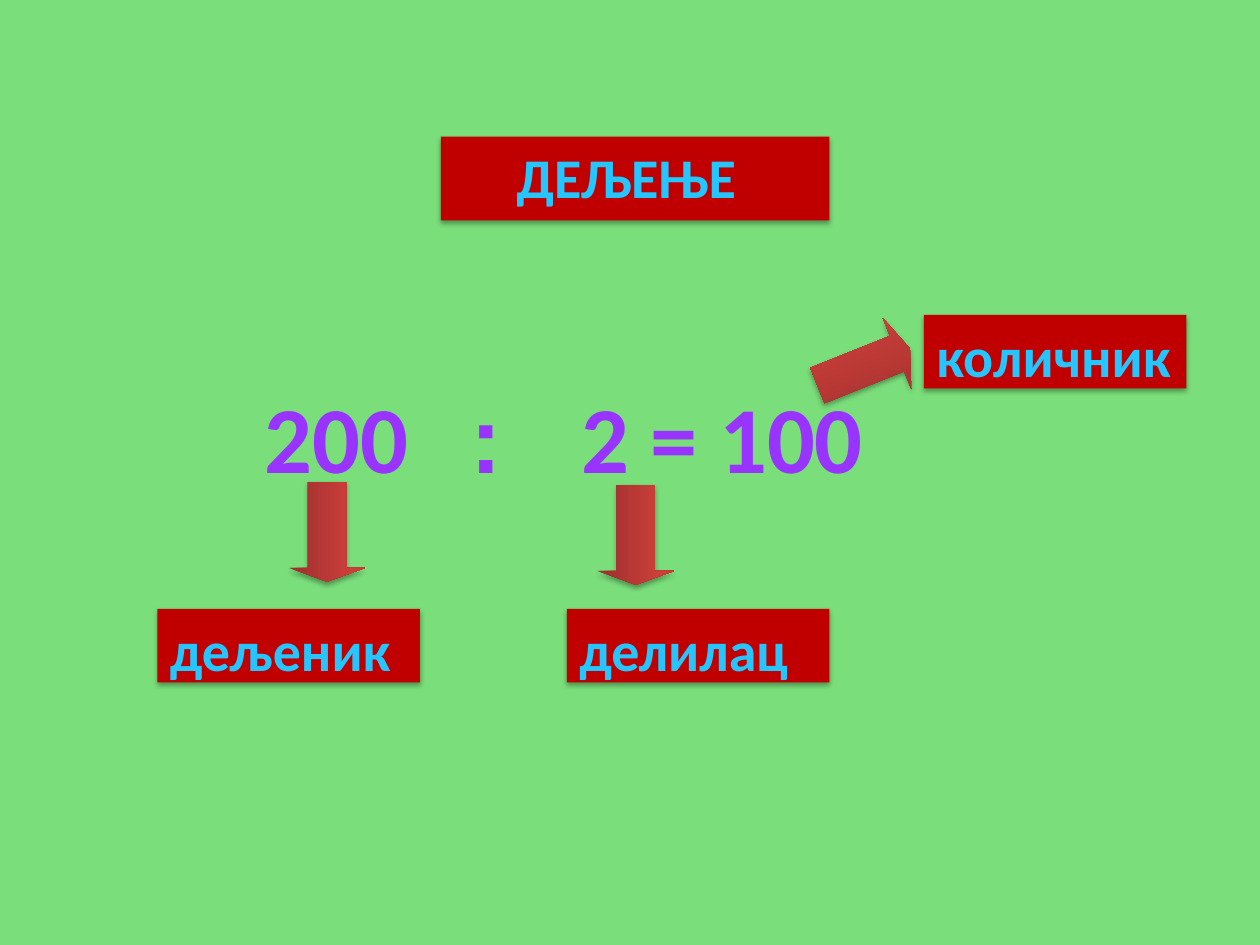
from dataclasses import dataclass

from lxml.etree import SubElement
from pptx import Presentation
from pptx.dml.color import RGBColor
from pptx.enum.shapes import MSO_SHAPE
from pptx.enum.text import MSO_ANCHOR, PP_ALIGN
from pptx.oxml.ns import qn
from pptx.util import Inches, Pt


@dataclass(frozen=True)
class Theme:
    background: str = "7ADE7A"
    label_fill: str = "C00000"
    label_text: str = "25C6FF"
    equation_text: str = "9933FF"
    arrow_stops: tuple = ((0, "9C2F2D"), (80, "CB3E3A"), (100, "CE3B37"))
    font: str = "Calibri"
    colon_font: str = "Arial"
    label_size: int = 32
    equation_size: int = 54


THEME = Theme()
CELLS_PER_INCH = 12
COLUMNS, ROWS = 120, 90
LABEL_SIZE = (25, 7)
ARROW_SIZE = (9.5, 7.3)


def cells(count):
    return Inches(count / CELLS_PER_INCH)


def area(*counts):
    return [cells(count) for count in counts]


def apply(target, values):
    for name, value in values.items():
        setattr(target, name, value)


def add_span(para, text, size, color, font=THEME.font):
    span = para.add_run()
    span.text = text
    apply(span.font, {"name": font, "size": Pt(size), "bold": True})
    span.font.color.rgb = RGBColor.from_string(color)


def add_color(parent, color, alpha=None):
    node = SubElement(parent, qn("a:srgbClr"), val=color)
    if alpha is not None:
        SubElement(node, qn("a:alpha"), val=str(alpha * 1000))


def add_shadow(shape):
    shape.shadow.inherit = False
    effects = shape.element.spPr.find(qn("a:effectLst"))
    shadow = SubElement(effects, qn("a:outerShdw"), blurRad=str(Pt(3.1)),
                        dist=str(Pt(1.8)), dir="5400000", rotWithShape="0")
    add_color(shadow, "000000", 35)


def fill_gradient(shape, stops):
    shape.fill.gradient()
    shape.fill.gradient_angle = 90
    stop_list = shape.element.spPr.find(qn("a:gradFill")).find(qn("a:gsLst"))
    for stop in list(stop_list):
        stop_list.remove(stop)
    for position, color in stops:
        stop = SubElement(stop_list, qn("a:gs"), pos=str(position * 1000))
        add_color(stop, color)


def add_label(page, text, column, row, size=LABEL_SIZE, indent=0):
    box = page.shapes.add_shape(MSO_SHAPE.RECTANGLE, *area(column, row, *size))
    box.fill.solid()
    box.fill.fore_color.rgb = RGBColor.from_string(THEME.label_fill)
    box.line.fill.background()
    add_shadow(box)
    frame = box.text_frame
    apply(frame, {"word_wrap": True, "vertical_anchor": MSO_ANCHOR.TOP,
                  "margin_left": Inches(0.1) + cells(indent)})
    para = frame.paragraphs[0]
    para.alignment = PP_ALIGN.LEFT
    add_span(para, text, THEME.label_size, THEME.label_text)


def add_arrow(page, column, row, rotation):
    arrow = page.shapes.add_shape(MSO_SHAPE.RIGHT_ARROW,
                                  *area(column, row, *ARROW_SIZE))
    arrow.rotation = rotation
    arrow.adjustments[1] = 0.181
    fill_gradient(arrow, THEME.arrow_stops)
    arrow.line.fill.background()
    add_shadow(arrow)


def add_equation(page, spans, tab_stops):
    box = page.shapes.add_textbox(*area(0, 34, 108, 15))
    frame = box.text_frame
    apply(frame, {"word_wrap": True, "vertical_anchor": MSO_ANCHOR.MIDDLE,
                  "margin_left": cells(25.2)})
    para = frame.paragraphs[0]
    para.alignment = PP_ALIGN.LEFT
    tabs = SubElement(para._p.get_or_add_pPr(), qn("a:tabLst"))
    for stop in tab_stops:
        SubElement(tabs, qn("a:tab"), pos=str(cells(stop)), algn="l")
    for text, font in spans:
        add_span(para, text, THEME.equation_size, THEME.equation_text, font)


def main():
    deck = Presentation()
    apply(deck, {"slide_width": cells(COLUMNS), "slide_height": cells(ROWS)})
    page = deck.slides.add_slide(deck.slide_layouts[6])
    page.background.fill.solid()
    page.background.fill.fore_color.rgb = RGBColor.from_string(THEME.background)

    add_equation(page, [("200\t", THEME.font), (":\t", THEME.colon_font),
                        ("2 = 100", THEME.font)], tab_stops=(19.6, 30.2))
    add_label(page, "ДЕЉЕЊЕ", 42, 13, size=(37, 8), indent=6)
    for text, column, row in (("количник", 88, 30), ("делилац", 54, 58),
                              ("дељеник", 15, 58)):
        add_label(page, text, column, row)
    for column, row, rotation in ((26.4, 47, 90), (55.8, 47.3, 90),
                                  (77.5, 31.3, 338.2)):
        add_arrow(page, column, row, rotation)
    deck.save("out.pptx")


if __name__ == "__main__":
    main()
